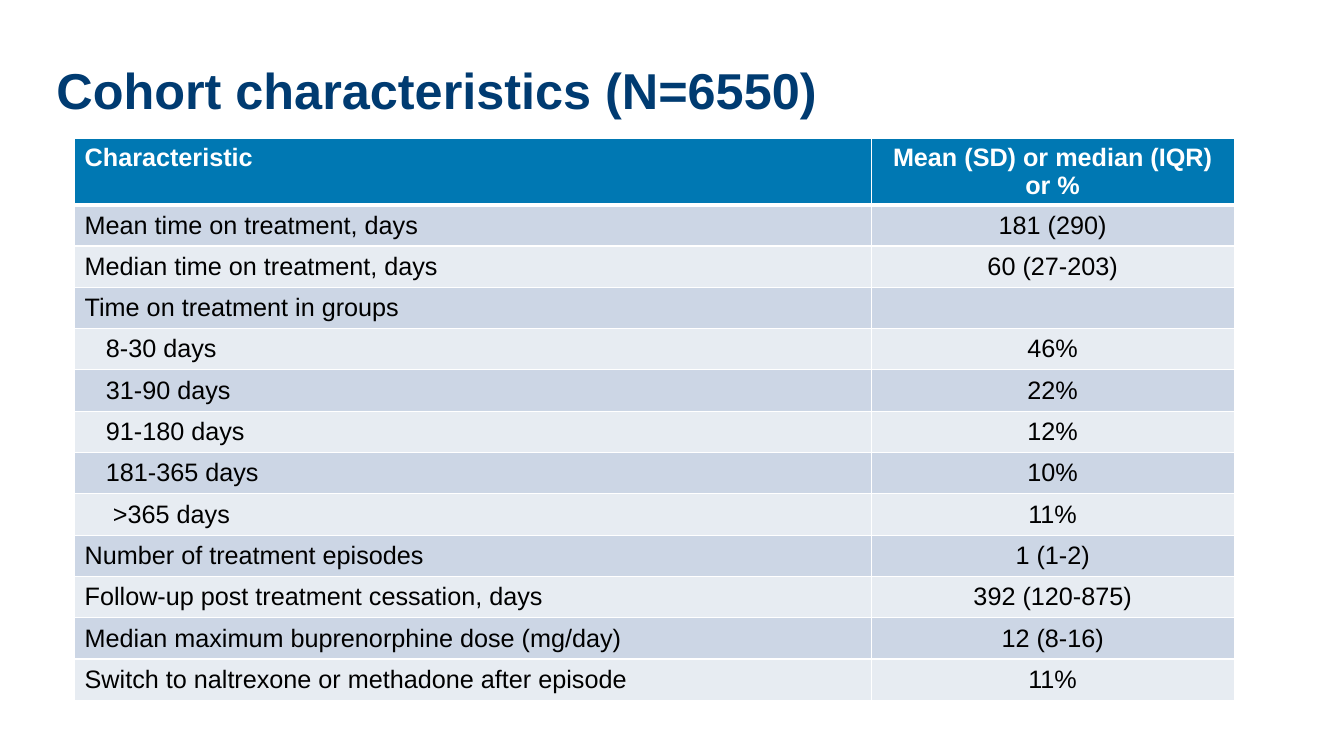
from lxml import etree
from pptx import Presentation
from pptx.dml.color import RGBColor
from pptx.enum.text import MSO_ANCHOR, MSO_AUTO_SIZE, PP_ALIGN
from pptx.oxml.ns import qn
from pptx.util import Pt

LEFT, CENTER = PP_ALIGN.LEFT, PP_ALIGN.CENTER
TOP, MIDDLE = MSO_ANCHOR.TOP, MSO_ANCHOR.MIDDLE
NO_FIT = MSO_AUTO_SIZE.NONE
SCALE = 9144
COLORS = {
    "navy": "003B71",
    "blue": "0078B3",
    "dark": "CCD6E5",
    "light": "E7ECF2",
    "white": "FFFFFF",
    "black": "000000",
}
HEAD = ("Characteristic", "Mean (SD) or median (IQR) or %")
ROWS = [
    ("Mean time on treatment, days", "181 (290)", 0),
    ("Median time on treatment, days", "60 (27-203)", 0),
    ("Time on treatment in groups", "", 0),
    ("8-30 days", "46%", 21),
    ("31-90 days", "22%", 21),
    ("91-180 days", "12%", 21),
    ("181-365 days", "10%", 21),
    (">365 days", "11%", 28),
    ("Number of treatment episodes", "1 (1-2)", 0),
    ("Follow-up post treatment cessation, days", "392 (120-875)", 0),
    ("Median maximum buprenorphine dose (mg/day)", "12 (8-16)", 0),
    ("Switch to naltrexone or methadone after episode", "11%", 0),
]


def px(count):
    return count * SCALE


def color(name):
    return RGBColor.from_string(COLORS[name])


def write(frame, text, size=18, ink="black", bold=False, align=LEFT, font="Arial"):
    para = frame.paragraphs[0]
    para.alignment = align
    para.font.size = Pt(size)
    if not text:
        return
    run = para.add_run()
    run.text = text
    run.font.name = font
    run.font.size = Pt(size)
    run.font.bold = bold
    run.font.color.rgb = color(ink)


class Deck:
    def __init__(self, width, height):
        self.show = Presentation()
        self.show.slide_width = px(width)
        self.show.slide_height = px(height)
        self.slide = None

    def start(self):
        self.slide = self.show.slides.add_slide(self.show.slide_layouts[5])

    def title(self, text, left, top, width, height):
        shape = self.slide.shapes.title
        shape.left, shape.top = px(left), px(top)
        shape.width, shape.height = px(width), px(height)
        frame = shape.text_frame
        frame.auto_size = NO_FIT
        frame.word_wrap = True
        frame.vertical_anchor = MIDDLE
        write(frame, text, size=36, ink="navy", bold=True)

    def border(self, cell, top=1, bottom=1):
        props = cell._tc.get_or_add_tcPr()
        for side, width in (("L", 1), ("R", 1), ("T", top), ("B", bottom)):
            line = etree.SubElement(props, qn(f"a:ln{side}"), w=str(Pt(width)))
            fill = etree.SubElement(line, qn("a:solidFill"))
            etree.SubElement(fill, qn("a:srgbClr"), val=COLORS["white"])

    def cell(self, cell, text, fill, anchor=MIDDLE, indent=0, top=1, bottom=1, **style):
        self.border(cell, top, bottom)
        cell.fill.solid()
        cell.fill.fore_color.rgb = color(fill)
        cell.vertical_anchor = anchor
        cell.margin_left = px(10 + indent)
        write(cell.text_frame, text, **style)

    def table(self, head, rows, left, top, widths, first, step):
        height = first + step * len(rows)
        frame = self.slide.shapes.add_table(
            len(rows) + 1, len(widths), px(left), px(top), px(sum(widths)), px(height))
        grid = frame.table
        for col, width in zip(grid.columns, widths):
            col.width = px(width)
        for index, row in enumerate(grid.rows):
            row.height = px(step if index else first)
        for col, (text, align) in enumerate(zip(head, (LEFT, CENTER))):
            self.cell(grid.cell(0, col), text, "blue", anchor=TOP, bottom=3,
                      ink="white", bold=True, align=align)
        for index, (label, value, indent) in enumerate(rows, 1):
            fill = "dark" if index % 2 else "light"
            edge = 3 if index == 1 else 1
            self.cell(grid.cell(index, 0), label, fill, indent=indent, top=edge)
            self.cell(grid.cell(index, 1), value, fill, top=edge, align=CENTER)


def main():
    deck = Deck(1333, 750)
    deck.start()
    deck.title("Cohort characteristics (N=6550)", 46, 16, 1205, 145)
    deck.table(HEAD, ROWS, 74, 137, (790, 360), 66, 41)
    deck.show.save("out.pptx")


if __name__ == "__main__":
    main()
